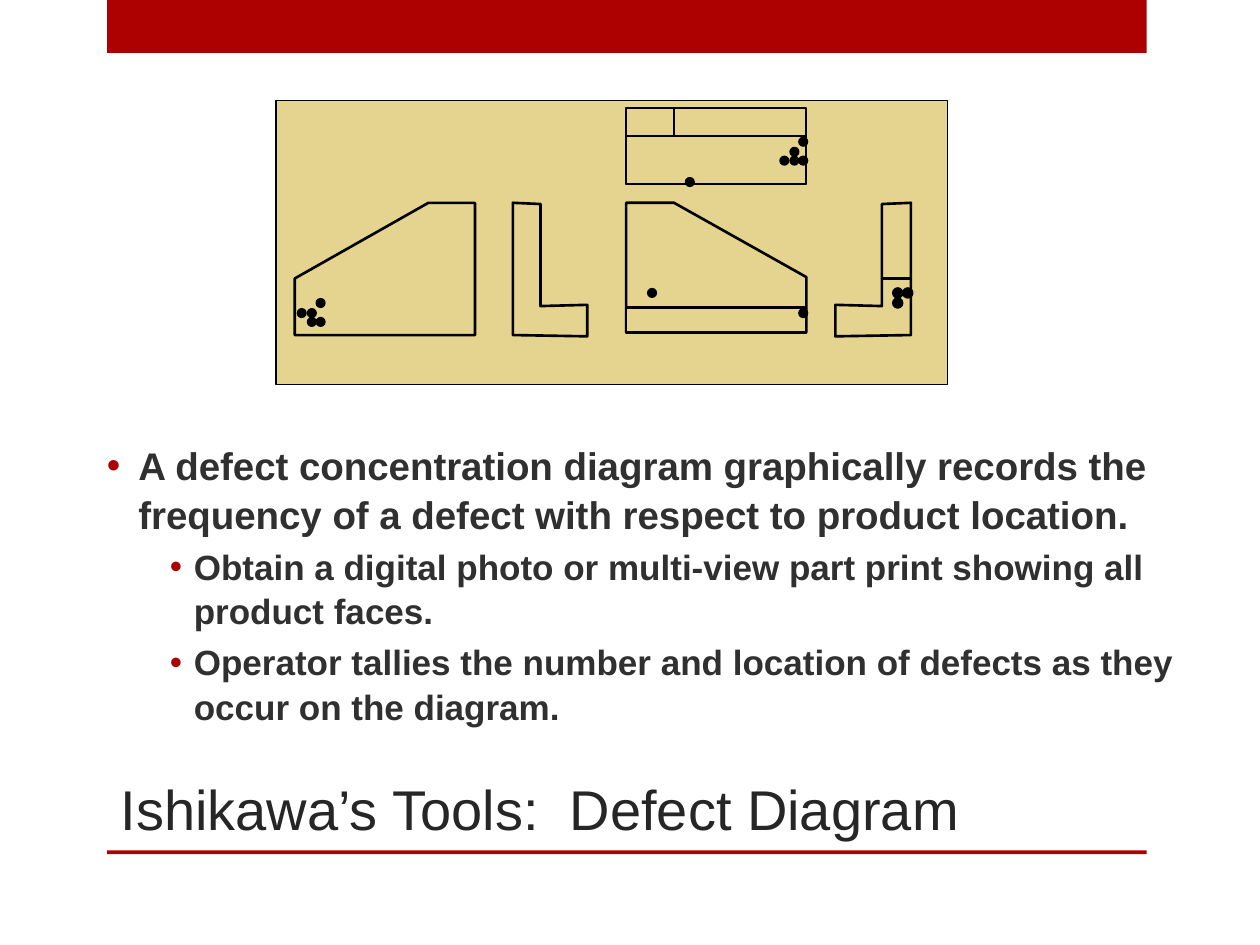
from lxml import etree
from pptx import Presentation
from pptx.dml.color import RGBColor
from pptx.enum.shapes import MSO_CONNECTOR, MSO_SHAPE
from pptx.enum.text import MSO_ANCHOR
from pptx.oxml.ns import qn
from pptx.util import Emu, Pt

PX = 9144  # EMU per px, 100 px to the inch
FONT = "Arial"
RED, TAN, BLACK = "AD0101", "E4D490", "000000"
BODY_COLOR, TITLE_COLOR = "303030", "262626"

# Outlines of the part, seen from each side
PART_VIEWS = {
    "front": [(497, 161), (497, 264), (640, 264), (640, 220), (535, 161)],
    "right": [(663, 267), (663, 242), (700, 243), (700, 162), (723, 161), (723, 266)],
    "back": [(377, 161), (377, 266), (234, 266), (234, 221), (340, 161)],
    "left": [(466, 267), (466, 242), (429, 243), (429, 162), (407, 161), (407, 266)],
}
PART_FACES = [(497, 86, 143, 60), (497, 108, 143, 38), (497, 244, 143, 20)]
PART_EDGES = [(535, 108, 535, 86), (700, 221, 723, 221)]

DOT_SIZE = 7
# Left and top of each defect, grouped by line width
DEFECTS = {
    0.75: [(627, 117), (627, 124), (619, 124), (634, 124), (634, 109), (634, 245),
           (244, 245), (251, 237), (244, 252), (236, 245), (251, 252),
           (544, 141), (514, 229)],
    1.5: [(717, 229), (709, 229), (709, 237)],
}

# Text, size, left margin, first-line indent, outline level
BULLETS = [
    ("A defect concentration diagram graphically records the frequency of a defect "
     "with respect to product location.", 22, 25, -25, 0),
    ("Obtain a digital photo or multi-view part print showing all product faces.",
     20, 69, -19, 1),
    ("Operator tallies the number and location of defects as they occur on the diagram.",
     20, 69, -19, 1),
]


def px(*lengths):
    return [Emu(length * PX) for length in lengths]


def color(hex_string):
    return RGBColor.from_string(hex_string)


def paint(shape, fill, line_width=None):
    shape.shadow.inherit = False
    shape.fill.solid()
    shape.fill.fore_color.rgb = color(fill)
    if line_width is None:
        shape.line.fill.background()
    else:
        shape.line.color.rgb = color(BLACK)
        shape.line.width = Pt(line_width)


def add_shape(slide, kind, box, fill, line_width=None):
    shape = slide.shapes.add_shape(kind, *px(*box))
    paint(shape, fill, line_width)


def add_outline(slide, points):
    builder = slide.shapes.build_freeform(*points[0], scale=PX)
    builder.add_line_segments(points[1:], close=True)
    paint(builder.convert_to_shape(), TAN, 1.5)


def add_edge(slide, ends):
    connector = slide.shapes.add_connector(MSO_CONNECTOR.STRAIGHT, *px(*ends))
    connector.line.color.rgb = color(BLACK)
    connector.line.width = Pt(1.5)
    etree.SubElement(connector._element.spPr, qn("a:effectLst"))


def add_text_frame(slide, box, anchor):
    text_frame = slide.shapes.add_textbox(*px(*box)).text_frame
    text_frame.word_wrap = True
    text_frame.vertical_anchor = anchor
    return text_frame


def write(paragraph, text, size, text_color, bold=False):
    paragraph.text = text
    for run in paragraph.runs:
        run.font.name = FONT
        run.font.size = Pt(size)
        run.font.bold = bold
        run.font.color.rgb = color(text_color)


def set_bullet(paragraph, margin, indent):
    properties = paragraph._p.get_or_add_pPr()
    properties.set("marL", str(margin * PX))
    properties.set("indent", str(indent * PX))
    bullet_color = etree.SubElement(properties, qn("a:buClr"))
    etree.SubElement(bullet_color, qn("a:srgbClr"), val=RED)
    etree.SubElement(properties, qn("a:buFont"), typeface=FONT)
    etree.SubElement(properties, qn("a:buChar"), char="•")


def add_bullets(slide, box):
    text_frame = add_text_frame(slide, box, MSO_ANCHOR.MIDDLE)
    for index, (text, size, margin, indent, level) in enumerate(BULLETS):
        paragraph = text_frame.add_paragraph() if index else text_frame.paragraphs[0]
        write(paragraph, text, size, BODY_COLOR, bold=True)
        paragraph.level = level
        paragraph.line_spacing = 1.05
        paragraph.space_before = Pt(size * 0.2)
        set_bullet(paragraph, margin, indent)


def add_defect_diagram(slide):
    add_shape(slide, MSO_SHAPE.RECTANGLE, (219, 80, 533, 225), TAN, 0.75)
    for points in PART_VIEWS.values():
        add_outline(slide, points)
    for box in PART_FACES:
        add_shape(slide, MSO_SHAPE.RECTANGLE, box, TAN, 1.25)
    for ends in PART_EDGES:
        add_edge(slide, ends)
    for line_width, corners in DEFECTS.items():
        for left, top in corners:
            box = (left, top, DOT_SIZE, DOT_SIZE)
            add_shape(slide, MSO_SHAPE.OVAL, box, BLACK, line_width)


def main():
    presentation = Presentation()
    presentation.slide_width, presentation.slide_height = px(1000, 750)
    slide = presentation.slides.add_slide(presentation.slide_layouts[6])

    add_shape(slide, MSO_SHAPE.RECTANGLE, (85, 0, 825, 42), RED)
    add_shape(slide, MSO_SHAPE.RECTANGLE, (85, 675, 825, 3), RED)
    add_defect_diagram(slide)
    add_bullets(slide, (75, 314, 900, 298))
    title = add_text_frame(slide, (86, 592, 873, 81), MSO_ANCHOR.BOTTOM)
    write(title.paragraphs[0], "Ishikawa’s Tools:  Defect Diagram", 32, TITLE_COLOR)

    presentation.save("out.pptx")


if __name__ == "__main__":
    main()
